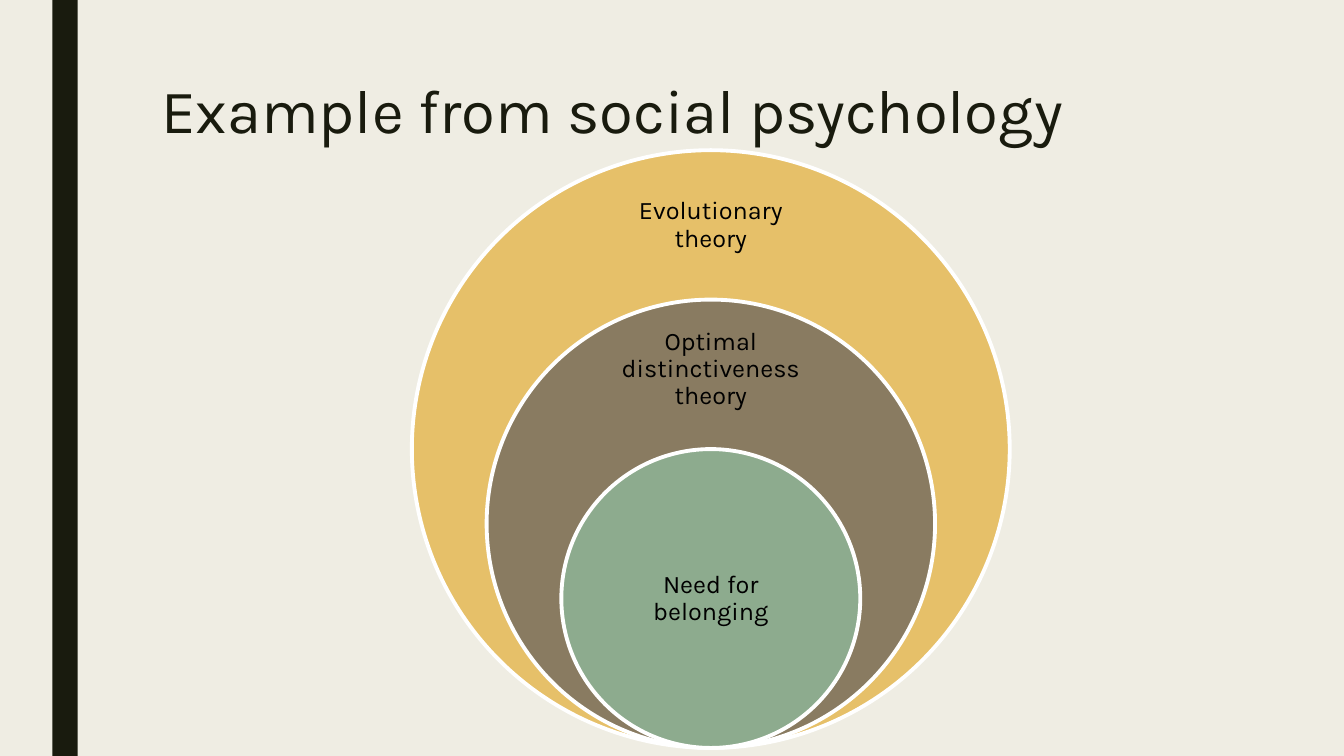
from pptx import Presentation
from pptx.dml.color import RGBColor
from pptx.enum.shapes import MSO_SHAPE
from pptx.enum.text import MSO_ANCHOR, MSO_AUTO_SIZE, PP_ALIGN
from pptx.util import Inches, Pt

FONT = "Karla"
CREAM = RGBColor(0xEF, 0xED, 0xE3)
DARK = RGBColor(0x19, 0x1B, 0x0E)
GOLD = RGBColor(0xE6, 0xC0, 0x69)
BROWN = RGBColor(0x89, 0x7B, 0x61)
GREEN = RGBColor(0x8D, 0xAB, 0x8E)
WHITE = RGBColor(0xFF, 0xFF, 0xFF)
BLACK = RGBColor(0x00, 0x00, 0x00)

CENTER_X = 7.05
CIRCLES_BOTTOM = 7.42
OUTER_DIAMETER = 5.93

THEORIES = [
    ("Evolutionary theory", 1, GOLD, 1.79, 2.07, 0.89),
    ("Optimal distinctiveness theory", 0.75, BROWN, 3.25, 2.07, 0.83),
    ("Need for belonging", 0.5, GREEN, 5.2, 2.1, 1.48),
]


def format_paragraph(p, size, color, align, spacing):
    p.alignment = align
    p.line_spacing = spacing
    p.font.name = FONT
    p.font.size = Pt(size)
    p.font.color.rgb = color


def add_filled_shape(s, kind, left, top, width, height, fill):
    sp = s.shapes.add_shape(kind, Inches(left), Inches(top), Inches(width), Inches(height))
    sp.shadow.inherit = False
    sp.fill.solid()
    sp.fill.fore_color.rgb = fill
    sp.line.fill.background()
    return sp


def set_title(s, text):
    sp = s.shapes.title
    sp.left, sp.top = Inches(1.5), Inches(0.75)
    sp.width, sp.height = Inches(10.5), Inches(1.62)
    tf = sp.text_frame
    tf.text = text
    tf.auto_size = MSO_AUTO_SIZE.NONE
    tf.vertical_anchor = MSO_ANCHOR.TOP
    format_paragraph(tf.paragraphs[0], 44, DARK, PP_ALIGN.LEFT, 0.89)


def add_circle(s, scale, fill):
    d = OUTER_DIAMETER * scale
    sp = add_filled_shape(s, MSO_SHAPE.OVAL, CENTER_X - d / 2, CIRCLES_BOTTOM - d, d, d, fill)
    sp.line.color.rgb = WHITE
    sp.line.width = Pt(2.75)


def add_label(s, text, top, width, height):
    sp = s.shapes.add_textbox(
        Inches(CENTER_X - width / 2), Inches(top), Inches(width), Inches(height))
    tf = sp.text_frame
    tf.word_wrap = True
    tf.vertical_anchor = MSO_ANCHOR.MIDDLE
    tf.margin_left = tf.margin_right = tf.margin_top = tf.margin_bottom = Inches(0.14)
    tf.text = text
    format_paragraph(tf.paragraphs[0], 18, BLACK, PP_ALIGN.CENTER, 0.9)


def main():
    prs = Presentation()
    prs.slide_width, prs.slide_height = Inches(13.33), Inches(7.5)
    s = prs.slides.add_slide(prs.slide_layouts[5])
    s.background.fill.solid()
    s.background.fill.fore_color.rgb = CREAM

    add_filled_shape(s, MSO_SHAPE.RECTANGLE, 0.52, 0, 0.25, 7.5, DARK)
    set_title(s, "Example from social psychology")
    for text, scale, fill, top, width, height in THEORIES:
        add_circle(s, scale, fill)
        add_label(s, text, top, width, height)

    prs.save("out.pptx")


if __name__ == "__main__":
    main()
